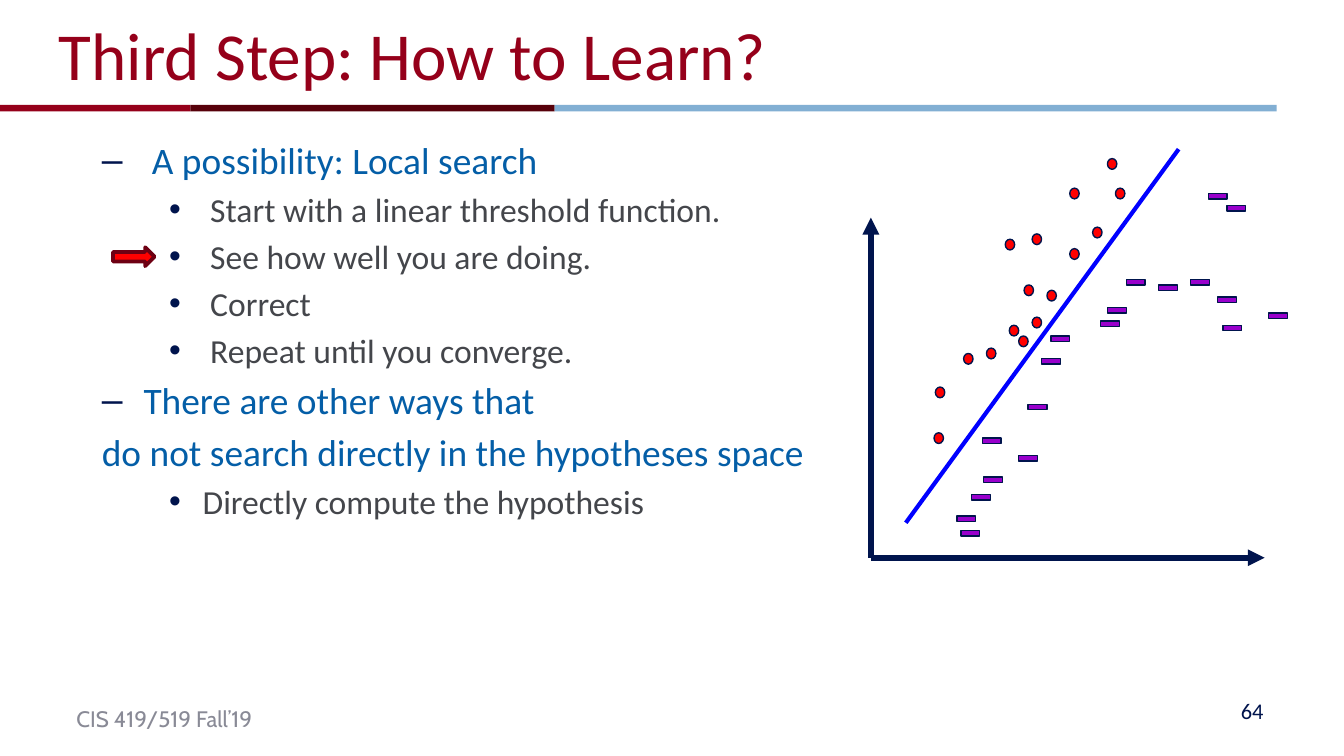
from dataclasses import dataclass

from lxml import etree
from pptx import Presentation
from pptx.dml.color import RGBColor
from pptx.enum.shapes import MSO_CONNECTOR, MSO_SHAPE
from pptx.enum.text import MSO_ANCHOR, PP_ALIGN
from pptx.oxml.ns import qn
from pptx.util import Inches, Pt

STRAIGHT = MSO_CONNECTOR.STRAIGHT
RECTANGLE, OVAL, RIGHT_ARROW = MSO_SHAPE.RECTANGLE, MSO_SHAPE.OVAL, MSO_SHAPE.RIGHT_ARROW
TOP, MIDDLE = MSO_ANCHOR.TOP, MSO_ANCHOR.MIDDLE
LEFT, RIGHT = PP_ALIGN.LEFT, PP_ALIGN.RIGHT


@dataclass(frozen=True)
class Theme:
    crimson: str = "95001A"
    maroon: str = "57000A"
    sky: str = "82AFD3"
    navy: str = "00144D"
    heading: str = "045EA7"
    body: str = "44464B"
    muted: str = "898A96"
    positive: str = "FF0000"
    negative: str = "9900CC"
    separator: str = "0000FF"
    pointer_edge: str = "6E0013"
    font: str = "Calibri"
    footer_font: str = "Cabin"
    title_size: int = 36
    heading_size: int = 20
    body_size: int = 18
    small_size: int = 12


THEME = Theme()

OUTLINE = [
    ("heading", "–", " A possibility: Local search"),
    ("detail", "•", " Start with a linear threshold function."),
    ("detail", "•", " See how well you are doing."),
    ("detail", "•", " Correct"),
    ("detail", "•", " Repeat until you converge."),
    ("heading", "–", "There are other ways that"),
    ("plain", None, "do not search directly in the hypotheses space"),
    ("detail", "•", "Directly compute the hypothesis"),
]
OUTLINE_STYLES = {
    "heading": (1, 0.81, -0.31, THEME.heading_size, THEME.heading),
    "plain": (1, 0.5, 0, THEME.heading_size, THEME.heading),
    "detail": (2, 1.25, -0.25, THEME.body_size, THEME.body),
}

PLOT_COLUMNS, PLOT_ROWS = 300, 304
POSITIVES = [
    (47, 211), (103, 131), (100, 67), (110, 139), (131, 105), (165, 58),
    (120, 125), (114, 101), (86, 148), (69, 152), (48, 177), (182, 29),
    (120, 63), (148, 29), (148, 74), (176, 7),
]
NEGATIVES = [
    (134, 139), (67, 284), (238, 97), (117, 190), (190, 97), (171, 128),
    (83, 215), (214, 101), (265, 42), (176, 118), (251, 33), (127, 156),
    (84, 244), (262, 131), (258, 110), (110, 228), (296, 122), (64, 273),
    (75, 257),
]


def color(value):
    return RGBColor.from_string(value)


def add_block(shapes, kind, box, fill, edge=None, edge_width=0.75):
    shape = shapes.add_shape(kind, *map(Inches, box))
    shape.shadow.inherit = False
    shape.fill.solid()
    shape.fill.fore_color.rgb = color(fill)
    if edge:
        shape.line.color.rgb = color(edge)
        shape.line.width = Pt(edge_width)
    else:
        shape.line.fill.background()


def add_line(shapes, start, end, line_color, width, arrow=False):
    connector = shapes.add_connector(STRAIGHT, *map(Inches, (*start, *end)))
    connector.line.color.rgb = color(line_color)
    connector.line.width = Pt(width)
    properties = connector._element.spPr
    if arrow:
        etree.SubElement(properties.find(qn("a:ln")), qn("a:tailEnd"), type="triangle")
    etree.SubElement(properties, qn("a:effectLst"))


def add_text_frame(slide, box, anchor=TOP, wrap=True):
    frame = slide.shapes.add_textbox(*map(Inches, box)).text_frame
    frame.word_wrap = wrap
    frame.vertical_anchor = anchor
    return frame


def write(paragraph, text, size, text_color, font=THEME.font, alignment=LEFT):
    paragraph.text = text
    paragraph.alignment = alignment
    paragraph.font.name = font
    paragraph.font.size = Pt(size)
    paragraph.font.color.rgb = color(text_color)


def set_bullet(paragraph, margin, indent, bullet):
    properties = paragraph._p.get_or_add_pPr()
    properties.set("marL", str(Inches(margin)))
    properties.set("indent", str(Inches(indent)))
    if bullet:
        bullet_color = etree.Element(qn("a:buClr"))
        etree.SubElement(bullet_color, qn("a:srgbClr"), val=THEME.navy)
        marks = [
            bullet_color,
            etree.Element(qn("a:buFont"), typeface="Arial"),
            etree.Element(qn("a:buChar"), char=bullet),
        ]
    else:
        marks = [etree.Element(qn("a:buNone"))]
    position = list(properties).index(properties.find(qn("a:defRPr")))
    properties[position:position] = marks


def add_title(slide, box):
    frame = add_text_frame(slide, box, MIDDLE)
    write(frame.paragraphs[0], "Third Step: How to Learn?", THEME.title_size, THEME.crimson)


def add_rule(slide, box):
    left, top, width, height = box
    for share, fill in ((0.15, THEME.crimson), (0.285, THEME.maroon), (0.565, THEME.sky)):
        add_block(slide.shapes, RECTANGLE, (left, top, width * share, height), fill)
        left += width * share


def add_outline(slide, box):
    frame = add_text_frame(slide, box)
    for index, (style, bullet, text) in enumerate(OUTLINE):
        level, margin, indent, size, text_color = OUTLINE_STYLES[style]
        paragraph = frame.add_paragraph() if index else frame.paragraphs[0]
        write(paragraph, text, size, text_color)
        paragraph.level = level
        paragraph.space_before = Pt(size * 0.2)
        set_bullet(paragraph, margin, indent, bullet)


def add_plot(slide, box):
    left, top, width, height = box
    shapes = slide.shapes.add_group_shape().shapes

    def place(column, row):
        return left + width * column / PLOT_COLUMNS, top + height * row / PLOT_ROWS

    origin = place(0, PLOT_ROWS)
    for axis_end in (place(0, 51), place(293, PLOT_ROWS)):
        add_line(shapes, origin, axis_end, THEME.navy, 3, arrow=True)
    for points, kind, size, fill in (
        (POSITIVES, OVAL, (0.07, 0.08), THEME.positive),
        (NEGATIVES, RECTANGLE, (0.14, 0.04), THEME.negative),
    ):
        for point in points:
            add_block(shapes, kind, (*place(*point), *size), fill, THEME.navy)
    add_line(shapes, place(26, 278), place(229, 0), THEME.separator, 2.25)


def add_pointer(slide, box):
    add_block(slide.shapes, RIGHT_ARROW, box, THEME.positive, THEME.pointer_edge, 2)


def add_footer(slide, box):
    left, top, width, height = box
    course = add_text_frame(slide, (left, top + 0.06, 1.52, height), wrap=False)
    write(course.paragraphs[0], "CIS 419/519 Fall’19", THEME.small_size, THEME.muted,
          THEME.footer_font)
    number = add_text_frame(slide, (left + width - 2.33, top, 2.33, height), MIDDLE)
    write(number.paragraphs[0], "64", THEME.small_size, THEME.navy, alignment=RIGHT)


def main():
    presentation = Presentation()
    presentation.slide_width = Inches(10)
    presentation.slide_height = presentation.slide_width * 9 // 16
    slide = presentation.slides.add_slide(presentation.slide_layouts[6])
    add_footer(slide, (0.47, 5.14, 9.03, 0.3))
    add_rule(slide, (-0.01, 0.78, 9.51, 0.05))
    add_title(slide, (0.34, 0.02, 9, 0.76))
    add_outline(slide, (0.16, 0.97, 9, 4.04))
    add_plot(slide, (6.48, 1.11, 3, 3.04))
    add_pointer(slide, (0.84, 1.84, 0.31, 0.14))
    presentation.save("out.pptx")


if __name__ == "__main__":
    main()
